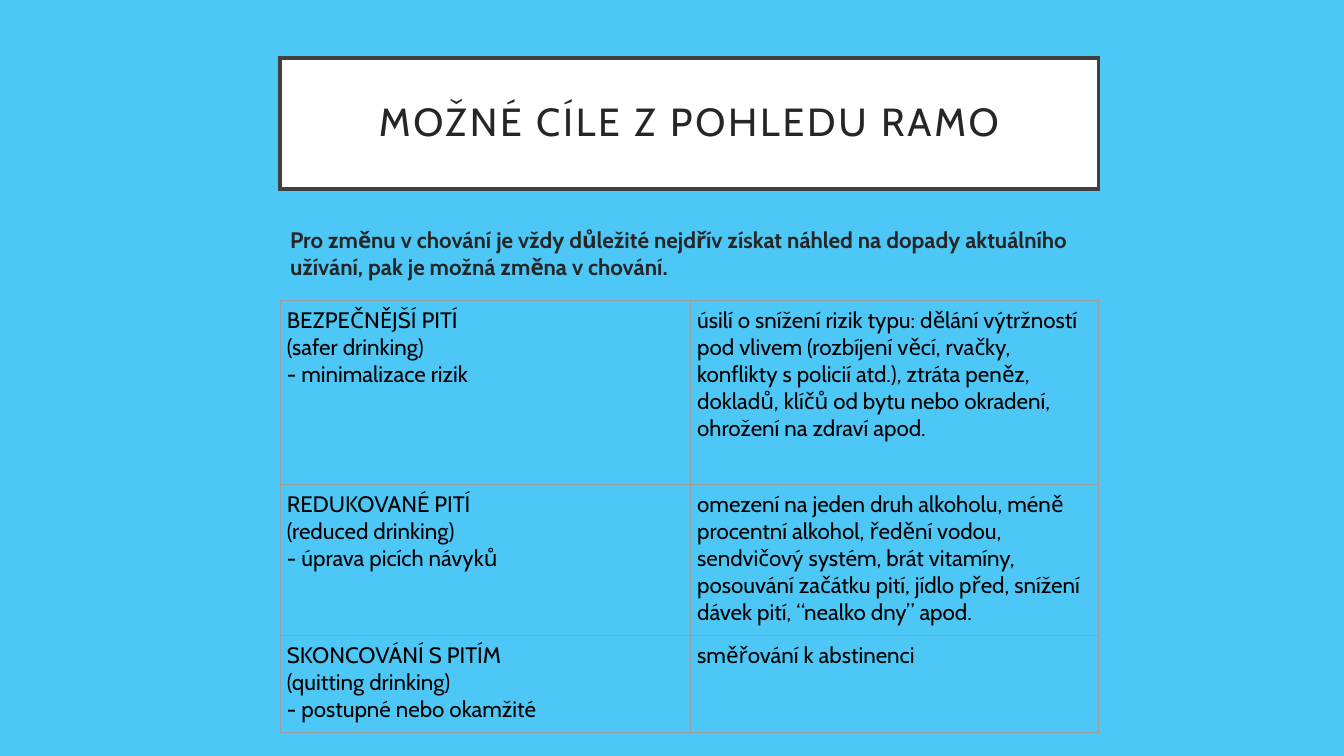
from lxml.etree import SubElement
from pptx import Presentation
from pptx.dml.color import RGBColor
from pptx.enum.shapes import MSO_SHAPE as Shape
from pptx.enum.text import MSO_ANCHOR as Anchor, PP_ALIGN as Align
from pptx.oxml.ns import qn
from pptx.util import Cm, Pt

FONT = "Cabin"
LEFT, WIDTH = 7.06, 20.62

GOALS = [
    (["BEZPEČNĚJŠÍ PITÍ", "(safer drinking)", "- minimalizace rizik"],
     ["úsilí o snížení rizik typu: dělání výtržností pod vlivem (rozbíjení věcí, "
      "rvačky, konflikty s policií atd.), ztráta peněz, dokladů, klíčů od bytu "
      "nebo okradení, ohrožení na zdraví apod."]),
    (["REDUKOVANÉ PITÍ", "(reduced drinking)", "- úprava picích návyků"],
     ["omezení na jeden druh alkoholu, méně procentní alkohol, ředění vodou, "
      "sendvičový systém, brát vitamíny, posouvání začátku pití, jídlo před, "
      "snížení dávek pití, “nealko dny” apod."]),
    (["SKONCOVÁNÍ S PITÍM", "(quitting drinking)", "- postupné nebo okamžité"],
     ["směřování k abstinenci"]),
]


def color(value):
    return RGBColor.from_string(value)


def set_margins(target, size):
    target.margin_left = target.margin_right = Cm(size)
    target.margin_top = target.margin_bottom = Cm(size)


def style(para, size, shade, bold=False):
    font = para.font
    font.name, font.size, font.bold = FONT, Pt(size), bold
    font.color.rgb = color(shade)


def add_title(page, left, top, width, height):
    box = page.shapes.add_shape(Shape.RECTANGLE, Cm(left), Cm(top), Cm(width), Cm(height))
    box.shadow.inherit = False
    box.fill.solid()
    box.fill.fore_color.rgb = color("FFFFFF")
    box.line.color.rgb = color("404040")
    box.line.width = Pt(2.5)
    # Square corners on the frame
    SubElement(box.line._get_or_add_ln(), qn("a:miter"), lim="800000")
    frame = box.text_frame
    frame.word_wrap = True
    frame.vertical_anchor = Anchor.MIDDLE
    set_margins(frame, 0.5)
    para = frame.paragraphs[0]
    para.alignment = Align.CENTER
    para.line_spacing = 0.9
    span = para.add_run()
    span.text = "MOŽNÉ CÍLE Z POHLEDU RAMO"
    style(para, 28, "262626")
    # Letter spacing in hundredths of a point
    span.font._element.set("spc", "200")


def add_intro(page, left, top, width, height):
    box = page.shapes.add_textbox(Cm(left), Cm(top), Cm(width), Cm(height))
    frame = box.text_frame
    frame.word_wrap = True
    para = frame.paragraphs[0]
    para.text = ("Pro změnu v chování je vždy důležité nejdřív získat náhled na dopady "
                 "aktuálního užívání, pak je možná změna v chování.")
    style(para, 16, "262626", bold=True)


def set_borders(cell, shade, width):
    props = cell._tc.get_or_add_tcPr()
    for index, side in enumerate(("lnL", "lnR", "lnT", "lnB")):
        line = props.makeelement(qn(f"a:{side}"), {"w": str(Pt(width))})
        fill = SubElement(line, qn("a:solidFill"))
        SubElement(fill, qn("a:srgbClr"), val=shade)
        props.insert(index, line)


def add_goals(page, left, top, column_widths, row_heights):
    frame = page.shapes.add_table(
        len(row_heights), len(column_widths), Cm(left), Cm(top),
        Cm(sum(column_widths)), Cm(sum(row_heights)))
    table = frame.table
    table.first_row = table.horz_banding = False
    for column, width in zip(table.columns, column_widths):
        column.width = Cm(width)
    for row, height, goal in zip(table.rows, row_heights, GOALS):
        row.height = Cm(height)
        for cell, lines in zip(row.cells, goal):
            cell.fill.background()
            set_margins(cell, 0.17)
            set_borders(cell, "9E9E9E", 0.5)
            cell.text = "\n".join(lines)
            for para in cell.text_frame.paragraphs:
                style(para, 16, "000000")


def main():
    deck = Presentation()
    deck.slide_width, deck.slide_height = Cm(33.87), Cm(19.05)
    page = deck.slides.add_slide(deck.slide_layouts[6])
    page.background.fill.solid()
    page.background.fill.fore_color.rgb = color("4DC8F6")

    add_title(page, LEFT, 1.46, WIDTH, 3.3)
    add_intro(page, LEFT, 5.57, WIDTH, 1.47)
    add_goals(page, LEFT, 7.57, [10.34, 10.28], [4.63, 3.81, 2.44])
    deck.save("out.pptx")


if __name__ == "__main__":
    main()
